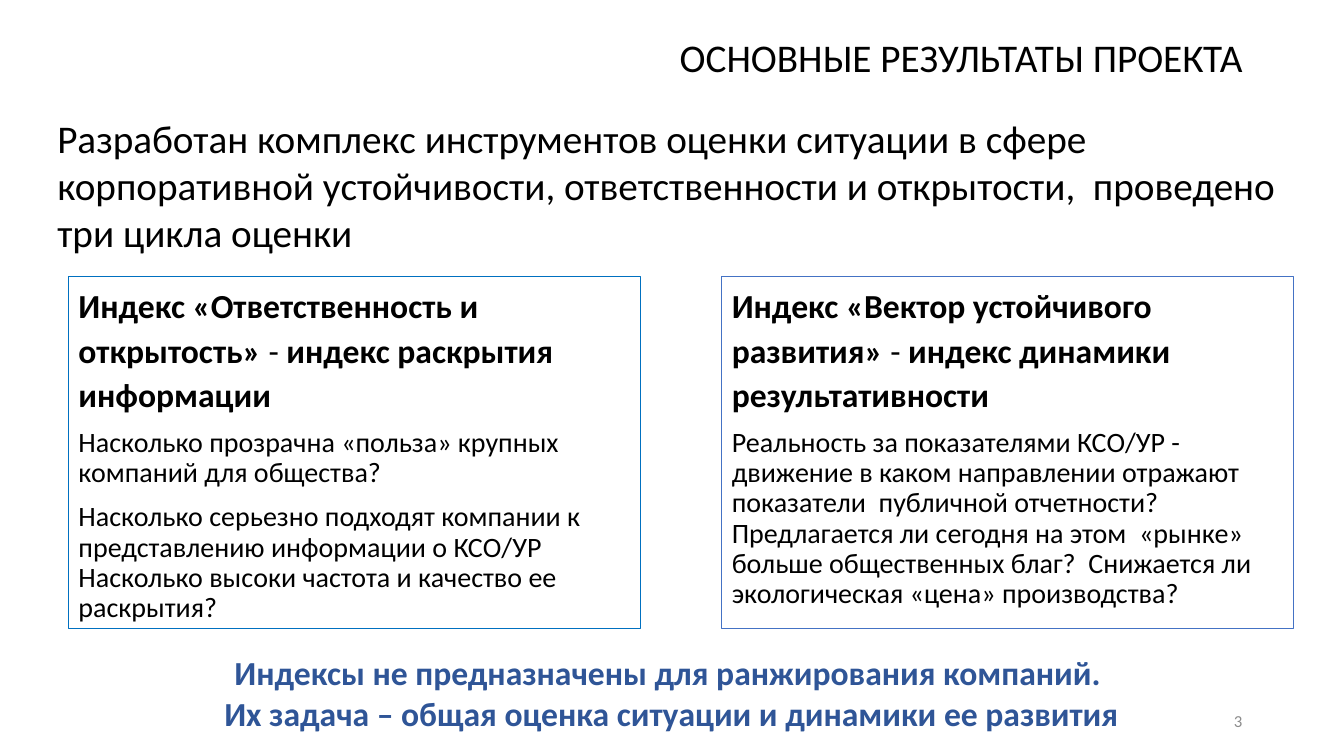
"""Slide with the main results of the project: two indices side by side."""
from pptx import Presentation
from pptx.dml.color import RGBColor
from pptx.enum.shapes import MSO_SHAPE
from pptx.enum.text import MSO_ANCHOR, PP_ALIGN
from pptx.util import Inches, Pt

BLACK = RGBColor(0x00, 0x00, 0x00)
GREY = RGBColor(0x8C, 0x8C, 0x8C)
NAVY = RGBColor(0x2F, 0x55, 0x97)
BLUE = RGBColor(0x00, 0x70, 0xC0)
ACCENT = RGBColor(0x44, 0x72, 0xC4)


def add_run(p, text, size, color, bold=False):
    r = p.add_run()
    r.text = text
    r.font.name = "Calibri"
    r.font.size = Pt(size)
    r.font.bold = bold
    r.font.color.rgb = color


prs = Presentation()
prs.slide_width, prs.slide_height = Inches(13.33), Inches(7.5)
s = prs.slides.add_slide(prs.slide_layouts[6])

TEXTS = [
    ((0.92, 0.44, 11.5, 0.31), ["ОСНОВНЫЕ РЕЗУЛЬТАТЫ ПРОЕКТА"],
     28, BLACK, False, PP_ALIGN.RIGHT, MSO_ANCHOR.MIDDLE, 0.9),
    ((0.47, 1.08, 12.57, 1.51),
     ["Разработан комплекс инструментов оценки ситуации в сфере корпоративной "
      "устойчивости, ответственности и открытости,  проведено три цикла оценки"],
     28, BLACK, False, PP_ALIGN.LEFT, MSO_ANCHOR.TOP, 1.0),
    ((0.59, 6.42, 12.14, 0.91),
     ["Индексы не предназначены для ранжирования компаний. ",
      "Их задача – общая оценка ситуации и динамики ее развития"],
     24, NAVY, True, PP_ALIGN.CENTER, MSO_ANCHOR.TOP, 1.0),
    ((9.42, 6.95, 3, 0.4), ["3"],
     12, GREY, False, PP_ALIGN.RIGHT, MSO_ANCHOR.MIDDLE, 1.0),
]
for box, lines, size, color, bold, align, anchor, spacing in TEXTS:
    tf = s.shapes.add_textbox(*map(Inches, box)).text_frame
    tf.word_wrap = True
    tf.vertical_anchor = anchor
    for i, line in enumerate(lines):
        p = tf.add_paragraph() if i else tf.paragraphs[0]
        p.alignment = align
        p.line_spacing = spacing
        add_run(p, line, size, color, bold)

INDICES = [
    (0.68, BLUE,
     ["Индекс «Ответственность и открытость» ", "- ", "индекс раскрытия информации"],
     ["Насколько прозрачна «польза» крупных компаний для общества?",
      "Насколько серьезно подходят компании к представлению информации о КСО/УР "
      "Насколько высоки частота и качество ее раскрытия?"]),
    (7.16, ACCENT,
     ["Индекс «Вектор устойчивого развития»", " - ", "индекс динамики результативности"],
     ["Реальность за показателями КСО/УР - движение в каком направлении отражают "
      "показатели  публичной отчетности? Предлагается ли сегодня на этом  «рынке» "
      "больше общественных благ?  Снижается ли экологическая «цена» производства?"]),
]
for left, line_color, heading, questions in INDICES:
    sp = s.shapes.add_shape(MSO_SHAPE.RECTANGLE, Inches(left), Inches(2.74),
                            Inches(5.67), Inches(3.5))
    sp.shadow.inherit = False
    sp.fill.background()
    sp.line.color.rgb = line_color
    sp.line.width = Pt(0.75)
    tf = sp.text_frame
    tf.word_wrap = True
    tf.vertical_anchor = MSO_ANCHOR.TOP
    p = tf.paragraphs[0]
    p.line_spacing = 1.1
    for text, bold in zip(heading, (True, False, True)):
        add_run(p, text, 24, BLACK, bold)
    for question in questions:
        p = tf.add_paragraph()
        p.line_spacing = 0.9
        add_run(p, question, 20, BLACK)
    for p in tf.paragraphs:
        p.alignment = PP_ALIGN.LEFT
        p.space_before = Pt(10)

prs.save("out.pptx")
